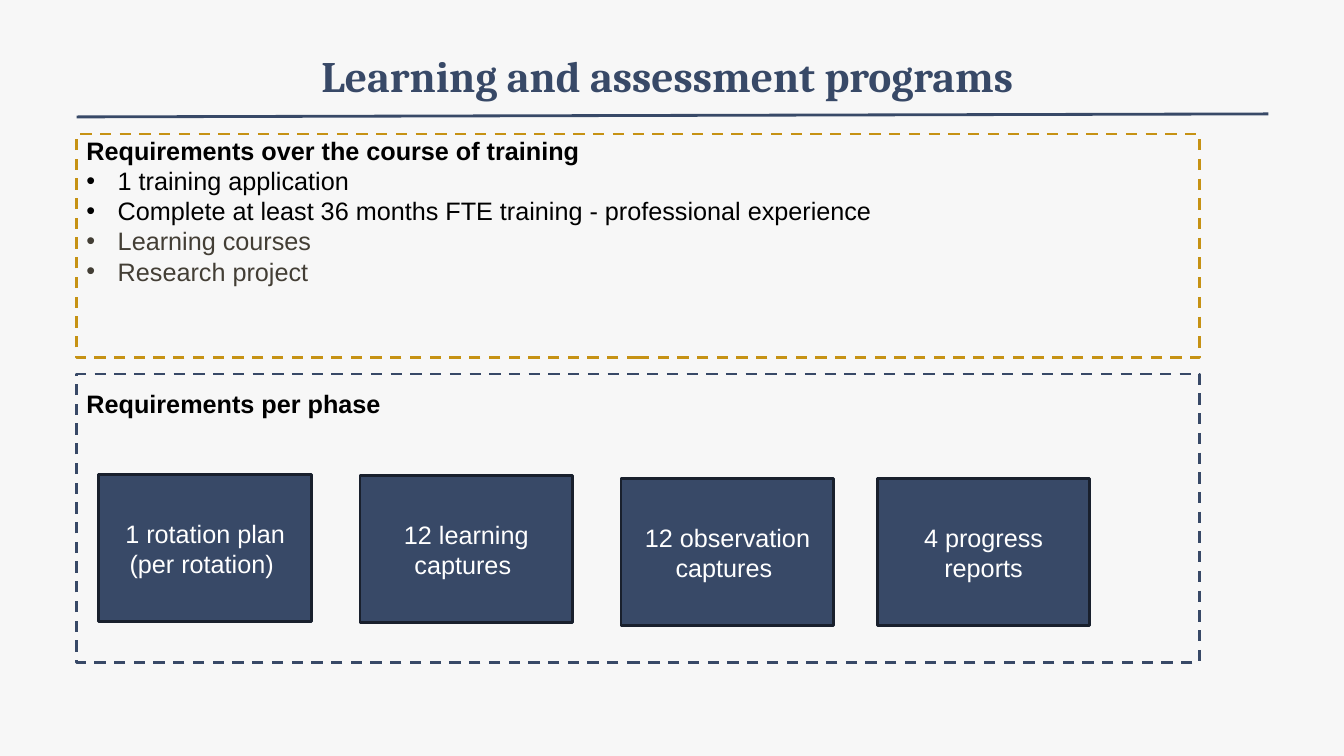
from lxml.etree import SubElement
from pptx import Presentation
from pptx.dml.color import RGBColor
from pptx.enum.dml import MSO_LINE
from pptx.enum.shapes import MSO_CONNECTOR, MSO_SHAPE
from pptx.enum.text import MSO_ANCHOR, MSO_AUTO_SIZE, PP_ALIGN
from pptx.oxml.ns import qn
from pptx.util import Inches, Pt

COLORS = {
    "background": "F7F7F7",
    "navy": "384967",
    "navy_edge": "19202D",
    "gold": "C69214",
    "black": "000000",
    "brown": "433E35",
    "white": "FFFFFF",
}
TITLE = {"name": "Cambria", "size": Pt(31), "bold": True}
HEADING = {"name": "Arial", "size": Pt(18), "bold": True}
BODY = {"name": "Arial", "size": Pt(18), "bold": False}

TRAINING_ITEMS = [
    ("1 training application", "black"),
    ("Complete at least 36 months FTE training - professional experience", "black"),
    ("Learning courses", "brown"),
    ("Research project", "brown"),
]
PHASE_CARDS = [
    ("1 rotation plan (per rotation) ", 0.22, 1.0),
    ("12 learning captures ", 2.81, 1.01),
    ("12 observation captures ", 5.4, 1.04),
    ("4 progress reports", 7.94, 1.04),
]


def rgb(color):
    return RGBColor.from_string(COLORS[color])


def write(paragraph, text, style, color, align=PP_ALIGN.LEFT):
    paragraph.alignment = align
    font = paragraph.add_run().font
    paragraph.runs[0].text = text
    for attribute, value in style.items():
        setattr(font, attribute, value)
    font.color.rgb = rgb(color)


def add_bullet(paragraph):
    properties = paragraph._p.get_or_add_pPr()
    properties.set("marL", str(Inches(0.31)))
    properties.set("indent", str(-Inches(0.31)))
    SubElement(properties, qn("a:buFont"), typeface="Arial")
    SubElement(properties, qn("a:buChar"), char="•")


def add_box(slide, left, top, width, height, edge, fill=None, dash=None):
    box = slide.shapes.add_shape(
        MSO_SHAPE.RECTANGLE, Inches(left), Inches(top), Inches(width), Inches(height)
    )
    box.shadow.inherit = False
    if fill:
        box.fill.solid()
        box.fill.fore_color.rgb = rgb(fill)
    else:
        box.fill.background()
    box.line.color.rgb = rgb(edge)
    box.line.width = Pt(2)
    if dash:
        box.line.dash_style = dash
    return box


def add_text_area(slide, left, top, width, height):
    area = slide.shapes.add_textbox(
        Inches(left), Inches(top), Inches(width), Inches(height)
    )
    area.text_frame.word_wrap = True
    return area.text_frame


def add_title(slide, left, top, width, height):
    title = slide.shapes.title
    placement = {"left": left, "top": top, "width": width, "height": height}
    for attribute, value in placement.items():
        setattr(title, attribute, Inches(value))
    frame_format = {
        "vertical_anchor": MSO_ANCHOR.MIDDLE,
        "auto_size": MSO_AUTO_SIZE.NONE,
        "word_wrap": True,
        "margin_left": Inches(0.07),
        "margin_right": Inches(0.07),
        "margin_top": Inches(0.04),
        "margin_bottom": Inches(0.04),
    }
    for attribute, value in frame_format.items():
        setattr(title.text_frame, attribute, value)
    write(title.text_frame.paragraphs[0], "Learning and assessment programs ",
          TITLE, "navy", PP_ALIGN.CENTER)


def add_title_rule(slide, left, top, width, rise):
    rule = slide.shapes.add_connector(
        MSO_CONNECTOR.STRAIGHT,
        Inches(left), Inches(top), Inches(left + width), Inches(top - rise),
    )
    rule.line.color.rgb = rgb("navy")
    rule.line.width = Pt(2)
    SubElement(rule._element.spPr, qn("a:effectLst"))


def add_training_region(slide, left, top, width, height):
    add_box(slide, left, top, width, height, "gold", dash=MSO_LINE.DASH)
    frame = add_text_area(slide, left, top - 0.04, 9.84, 1.62)
    write(frame.paragraphs[0], "Requirements over the course of training",
          HEADING, "black")
    for item, color in TRAINING_ITEMS:
        paragraph = frame.add_paragraph()
        add_bullet(paragraph)
        write(paragraph, item, BODY, color)


def add_phase_region(slide, left, top, width, height):
    add_box(slide, left, top, width, height, "navy", dash=MSO_LINE.DASH)
    frame = add_text_area(slide, left, top + 0.09, 6.67, 0.4)
    write(frame.paragraphs[0], "Requirements per phase", HEADING, "black")
    for requirement, across, down in PHASE_CARDS:
        card = add_box(slide, left + across, top + down, 2.11, 1.46,
                       "navy_edge", fill="navy")
        card.text_frame.word_wrap = True
        card.text_frame.vertical_anchor = MSO_ANCHOR.MIDDLE
        write(card.text_frame.paragraphs[0], requirement, BODY, "white",
              PP_ALIGN.CENTER)


def main():
    presentation = Presentation()
    presentation.slide_width = Inches(13.33)
    presentation.slide_height = Inches(7.5)
    slide = presentation.slides.add_slide(presentation.slide_layouts[5])
    slide.background.fill.solid()
    slide.background.fill.fore_color.rgb = rgb("background")
    add_title(slide, 1.66, 0.29, 10.01, 0.91)
    add_title_rule(slide, 0.76, 1.16, 11.82, 0.03)
    add_training_region(slide, 0.76, 1.33, 11.14, 2.22)
    add_phase_region(slide, 0.76, 3.71, 11.14, 2.86)
    presentation.save("out.pptx")


if __name__ == "__main__":
    main()
